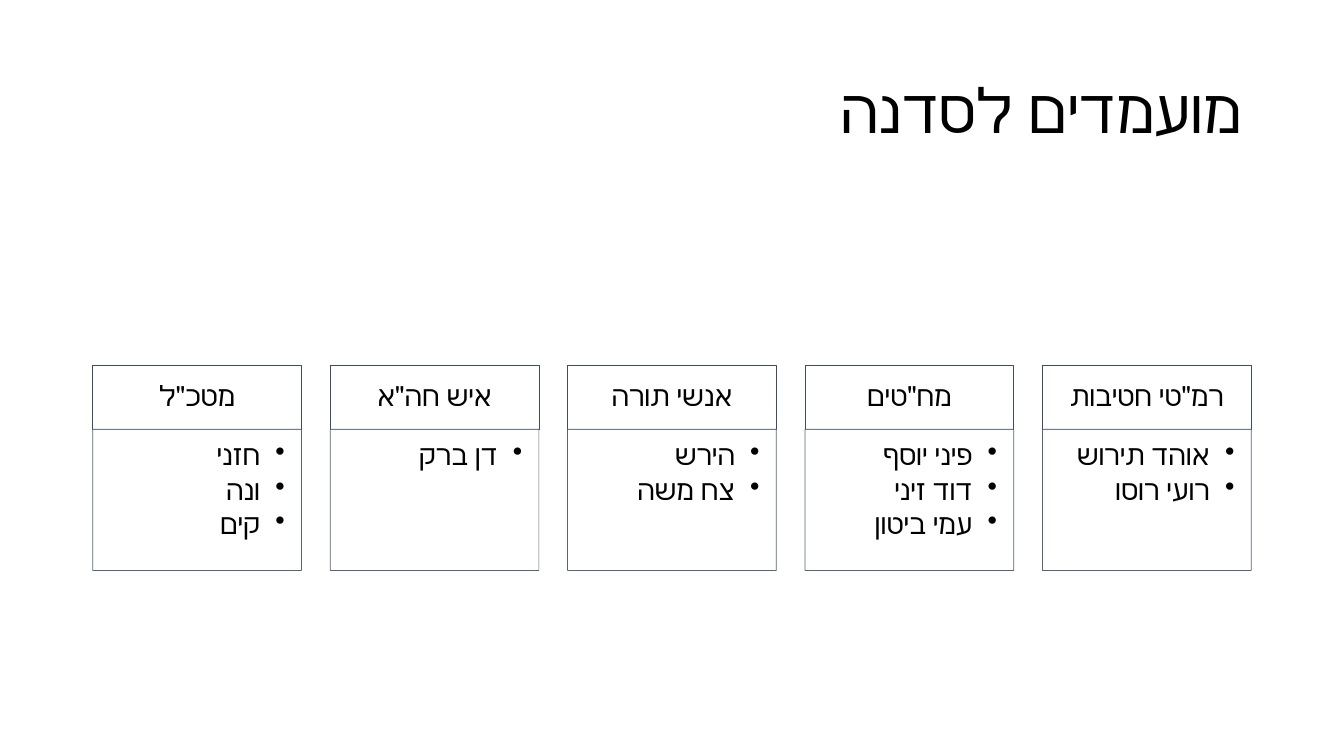
from pptx import Presentation
from pptx.dml.color import RGBColor
from pptx.enum.shapes import MSO_SHAPE as Shape
from pptx.enum.text import MSO_ANCHOR as Anchor, PP_ALIGN as Align
from pptx.oxml.ns import qn
from pptx.util import Inches, Pt
from lxml.etree import SubElement

TITLE = "מועמדים לסדנה"
GROUPS = [  # read from right to left
    ('רמ"טי חטיבות', ["אוהד תירוש", "רועי רוסו"]),
    ('מח"טים', ["פיני יוסף", "דוד זיני", "עמי ביטון"]),
    ("אנשי תורה", ["הירש", "צח משה"]),
    ('איש חה"א', ["דן ברק"]),
    ('מטכ"ל', ["חזני", "ונה", "קים"]),
]

THEME = {
    "font": "Roboto",
    "text": RGBColor.from_string("000000"),
    "fill": RGBColor.from_string("FFFFFF"),
    "head_line": RGBColor.from_string("3E4C60"),
    "body_line": RGBColor.from_string("44546A"),
    "title_size": Pt(44),
    "text_size": Pt(20),
    "line_width": Pt(0.5),
    "body_alpha": 90,
}

ROW_LEFT, ROW_WIDTH, CARD_WIDTH = 0.92, 11.49, 2.07
HEAD_TOP, HEAD_HEIGHT, BODY_HEIGHT = 3.63, 0.63, 1.4
PITCH = (ROW_WIDTH - CARD_WIDTH) / (len(GROUPS) - 1)


def set_frame(box, insets, anchor):
    frame = box.text_frame
    frame.word_wrap = True
    frame.vertical_anchor = anchor
    (frame.margin_left, frame.margin_top,
     frame.margin_right, frame.margin_bottom) = map(Inches, insets)
    return frame


def style_para(para, size, align, bullet=False):
    """Set right-to-left text in the theme font, with a bullet if asked."""
    para.alignment = align
    para.line_spacing = 0.9
    props = para._p.get_or_add_pPr()
    props.set("rtl", "1")
    if bullet:
        para.level = 1
        para.space_after = Pt(3)
        props.set("marL", str(Inches(0.25)))
        props.set("indent", str(Inches(-0.25)))
        SubElement(props, qn("a:buChar")).set("char", "•")
    for span in para.runs:
        span.font.size = size
        span.font.color.rgb = THEME["text"]
        span.font.name = THEME["font"]


def add_panel(page, left, top, height, line_color, alpha=100):
    panel = page.shapes.add_shape(Shape.RECTANGLE, Inches(left), Inches(top),
                                  Inches(CARD_WIDTH), Inches(height))
    panel.shadow.inherit = False
    panel.fill.solid()
    panel.fill.fore_color.rgb = THEME["fill"]
    panel.line.color.rgb = line_color
    panel.line.width = THEME["line_width"]
    if alpha < 100:
        for color in panel._element.spPr.iter(qn("a:srgbClr")):
            SubElement(color, qn("a:alpha")).set("val", str(alpha * 1000))
    return panel


def add_card(page, left, heading, names):
    head = add_panel(page, left, HEAD_TOP, HEAD_HEIGHT, THEME["head_line"])
    frame = set_frame(head, (0.16, 0.09, 0.16, 0.09), Anchor.MIDDLE)
    frame.text = heading
    style_para(frame.paragraphs[0], THEME["text_size"], Align.CENTER)

    body = add_panel(page, left, HEAD_TOP + HEAD_HEIGHT, BODY_HEIGHT,
                     THEME["body_line"], THEME["body_alpha"])
    frame = set_frame(body, (0.12, 0.12, 0.16, 0.17), Anchor.TOP)
    frame.text = "\n".join(names)
    for para in frame.paragraphs:
        style_para(para, THEME["text_size"], Align.RIGHT, bullet=True)


def main():
    deck = Presentation()
    deck.slide_width, deck.slide_height = Inches(13.33), Inches(7.5)
    page = deck.slides.add_slide(deck.slide_layouts[6])

    title = page.shapes.add_textbox(Inches(0.92), Inches(0.4), Inches(11.5), Inches(1.45))
    frame = set_frame(title, (0.1, 0.05, 0.1, 0.05), Anchor.MIDDLE)
    frame.text = TITLE
    style_para(frame.paragraphs[0], THEME["title_size"], Align.RIGHT)

    right_most = ROW_LEFT + ROW_WIDTH - CARD_WIDTH
    for index, (heading, names) in enumerate(GROUPS):
        add_card(page, right_most - index * PITCH, heading, names)

    deck.save("out.pptx")


if __name__ == "__main__":
    main()
